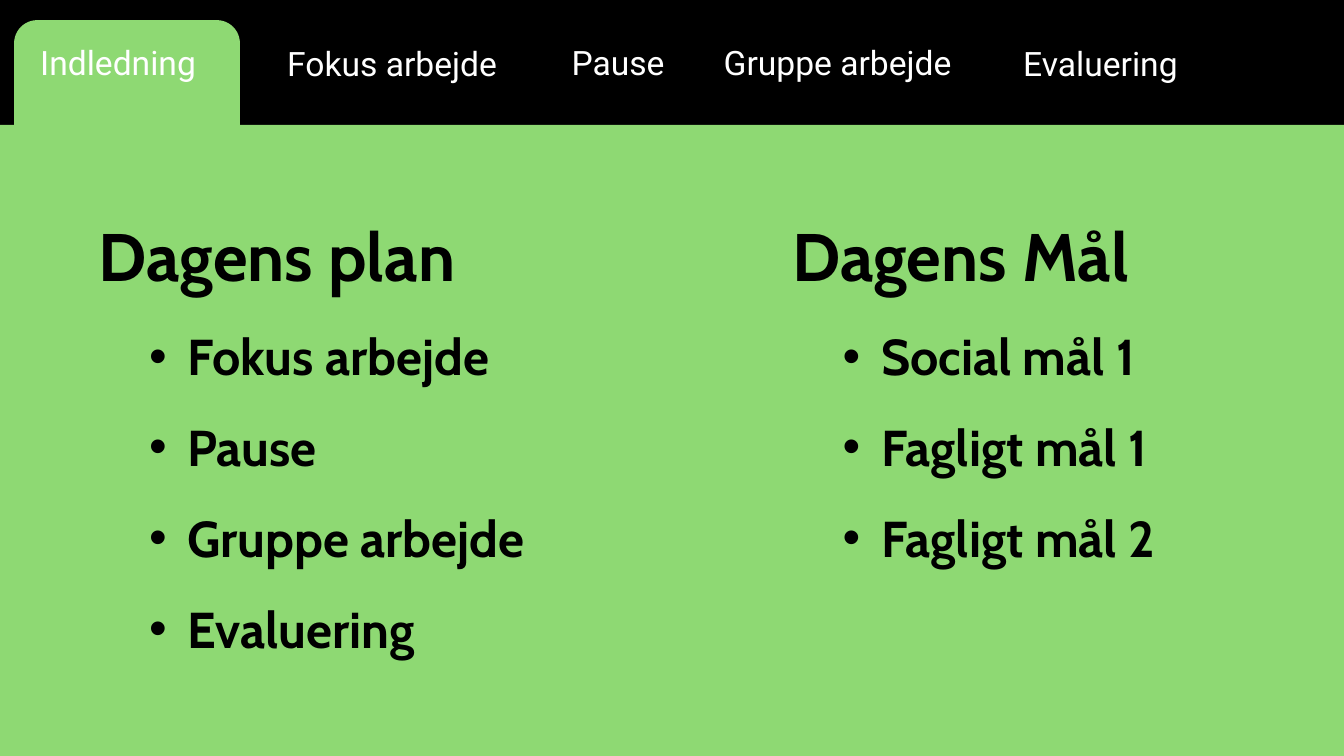
"""Build the tabbed lesson slide with the day's plan and goals."""
from typing import NamedTuple

from lxml.etree import SubElement
from pptx import Presentation
from pptx.dml.color import RGBColor
from pptx.enum.shapes import MSO_SHAPE as Preset
from pptx.enum.text import MSO_AUTO_SIZE as AutoSize
from pptx.oxml.ns import qn
from pptx.util import Inches, Pt

BLACK, WHITE, GREEN = "000000", "FFFFFF", "8ED973"


class Tab(NamedTuple):
    label: str
    left: float
    top: float
    width: float


class Column(NamedTuple):
    heading: str
    items: tuple[str, ...]
    left: float
    height: float


TABS = (
    Tab("Indledning", 0.3, 0.37, 2.15),
    Tab("Fokus arbejde", 2.75, 0.38, 2.52),
    Tab("Pause", 5.57, 0.37, 1.21),
    Tab("Gruppe arbejde", 7.08, 0.37, 2.67),
    Tab("Evaluering", 10.05, 0.38, 2.15),
)
COLUMNS = (
    Column("Dagens plan", ("Fokus arbejde", "Pause", "Gruppe arbejde", "Evaluering"), 0.88, 4.46),
    Column("Dagens Mål", ("Social mål 1", "Fagligt mål 1", "Fagligt mål 2"), 7.76, 4.27),
)


def color(value: str) -> RGBColor:
    return RGBColor.from_string(value)


def add_panel(shapes, preset, left: float, top: float, width: float, height: float) -> None:
    panel = shapes.add_shape(preset, Inches(left), Inches(top), Inches(width), Inches(height))
    panel.shadow.inherit = False
    panel.fill.solid()
    panel.fill.fore_color.rgb = color(GREEN)
    panel.line.fill.background()


def add_frame(shapes, left: float, top: float, width: float, height: float):
    box = shapes.add_textbox(Inches(left), Inches(top), Inches(width), Inches(height))
    frame = box.text_frame
    frame.word_wrap = True
    frame.auto_size = AutoSize.SHAPE_TO_FIT_TEXT
    return frame


def write(para, text: str, *, size: float, font: str, fill: str, bold: bool = False) -> None:
    span = para.add_run()
    span.text = text
    span.font.size = Pt(size)
    span.font.name = font
    span.font.bold = bold
    span.font.color.rgb = color(fill)


def make_bullet(para) -> None:
    para.level = 1
    para.line_spacing = 1.5
    properties = para._p.get_or_add_pPr()
    properties.set("marL", str(Inches(0.88)))
    properties.set("indent", str(Inches(-0.38)))
    SubElement(properties, qn("a:buFont"), typeface="Arial")
    SubElement(properties, qn("a:buChar"), char="•")


def add_tab(shapes, tab: Tab) -> None:
    frame = add_frame(shapes, tab.left, tab.top, tab.width, 0.5)
    write(frame.paragraphs[0], tab.label, size=24, font="Roboto", fill=WHITE)


def add_column(shapes, column: Column) -> None:
    frame = add_frame(shapes, column.left, 2.08, 4.69, column.height)
    write(frame.paragraphs[0], column.heading, size=48, font="Cabin", fill=BLACK, bold=True)
    for item in column.items:
        para = frame.add_paragraph()
        make_bullet(para)
        write(para, item, size=36, font="Cabin", fill=BLACK, bold=True)


def main() -> None:
    deck = Presentation()
    deck.slide_width, deck.slide_height = Inches(13.33), Inches(7.5)
    page = deck.slides.add_slide(deck.slide_layouts[6])
    page.background.fill.solid()
    page.background.fill.fore_color.rgb = color(BLACK)
    folder = page.shapes.add_group_shape()
    add_panel(folder.shapes, Preset.ROUNDED_RECTANGLE, 0.14, 0.2, 2.24, 1.37)
    add_panel(folder.shapes, Preset.RECTANGLE, 0, 1.24, 13.33, 6.26)
    for tab in TABS:
        add_tab(page.shapes, tab)
    for column in COLUMNS:
        add_column(page.shapes, column)
    deck.save("out.pptx")


if __name__ == "__main__":
    main()
